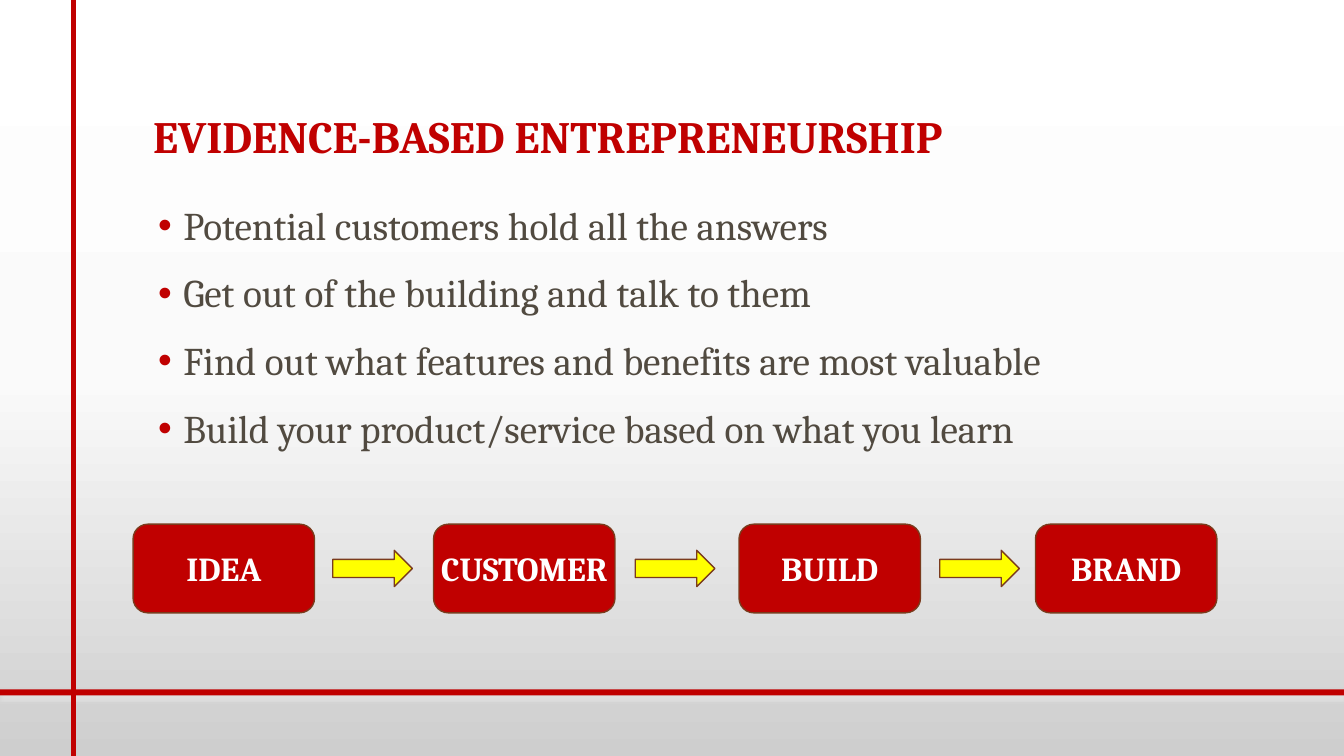
from copy import deepcopy

from lxml.etree import SubElement
from pptx import Presentation
from pptx.dml.color import RGBColor as RGB
from pptx.enum.shapes import MSO_CONNECTOR as LINE, MSO_SHAPE as SHAPE
from pptx.enum.text import MSO_ANCHOR as ANCHOR, PP_ALIGN as ALIGN
from pptx.oxml.ns import qn
from pptx.util import Inches, Pt

RED = RGB(0xC0, 0x00, 0x00)
BROWN = RGB(0x7A, 0x3B, 0x1D)
GREY = RGB(0x51, 0x4A, 0x40)
WHITE = RGB(0xFF, 0xFF, 0xFF)
YELLOW = RGB(0xFF, 0xFF, 0x00)
FADE = [(0, WHITE), (0.5, RGB(0xFA, 0xFA, 0xFA)), (1, RGB(0xCE, 0xCE, 0xCE))]

TITLE = "EVIDENCE-BASED ENTREPRENEURSHIP"
POINTS = [
    "Potential customers hold all the answers",
    "Get out of the building and talk to them",
    "Find out what features and benefits are most valuable",
    "Build your product/service based on what you learn",
]
STEPS = [("IDEA", 1.32), ("CUSTOMER", 4.3), ("BUILD", 7.33), ("BRAND", 10.27)]
ARROWS = [3.3, 6.3, 9.32]


def style(item, form):
    """Set each value of a format dict on an item."""
    for key, value in form.items():
        setattr(item, key, value)


def write(para, text, size, color, bold=False):
    """Add one run of text to a paragraph."""
    run = para.add_run()
    run.text = text
    style(run.font, {"name": "Cambria", "size": Pt(size), "bold": bold})
    run.font.color.rgb = color


def draw(slide, kind, box, fill, edge=None):
    """Draw a flat filled shape in a box given in inches."""
    shape = slide.shapes.add_shape(kind, *map(Inches, box))
    shape.shadow.inherit = False
    shape.fill.solid()
    shape.fill.fore_color.rgb = fill
    if edge is None:
        shape.line.fill.background()
    else:
        shape.line.color.rgb = edge
        shape.line.width = Pt(1)
    return shape


def frame(slide, box, anchor=ANCHOR.TOP):
    """Add a wrapping text box and return its text frame."""
    text = slide.shapes.add_textbox(*map(Inches, box)).text_frame
    style(text, {"word_wrap": True, "vertical_anchor": anchor})
    return text


def back(slide):
    """Fill the background with the grey fade."""
    fill = slide.background.fill
    fill.gradient()
    fill.gradient_angle = 270
    stops = fill._fill._gradFill.find(qn("a:gsLst"))
    stops.append(deepcopy(stops[0]))
    for stop, (place, color) in zip(fill.gradient_stops, FADE):
        stop.position = place
        stop.color.rgb = color


def rules(slide, wide, high):
    """Draw the red cross rules over the whole slide."""
    bar = draw(slide, SHAPE.RECTANGLE, (0, 6.84, wide, 0.06), RED)
    effects = bar._element.spPr.find(qn("a:effectLst"))
    glow = SubElement(effects, qn("a:outerShdw"), blurRad=str(Pt(2)),
                      dist=str(Pt(2)), dir="5400000", rotWithShape="0")
    tint = SubElement(glow, qn("a:srgbClr"), val=str(WHITE))
    SubElement(tint, qn("a:alpha"), val="40000")
    ends = map(Inches, (0.73, 0, 0.73, high))
    line = slide.shapes.add_connector(LINE.STRAIGHT, *ends)
    line.line.color.rgb = RED
    line.line.width = Pt(4)
    SubElement(line._element.spPr, qn("a:effectLst"))


def head(slide, box):
    """Write the title at the foot of its box."""
    para = frame(slide, box, ANCHOR.BOTTOM).paragraphs[0]
    para.line_spacing = 0.9
    write(para, TITLE, 32, RED, True)


def points(slide, box):
    """Write the bulleted points."""
    text = frame(slide, box)
    for i, point in enumerate(POINTS):
        para = text.add_paragraph() if i else text.paragraphs[0]
        style(para, {"line_spacing": 0.9, "space_before": Pt(18 if i else 0)})
        props = para._p.get_or_add_pPr()
        props.set("marL", str(Inches(0.3)))
        props.set("indent", str(Inches(-0.25)))
        tint = SubElement(props, qn("a:buClr"))
        SubElement(tint, qn("a:srgbClr"), val=str(RED))
        SubElement(props, qn("a:buFont"), typeface="Arial")
        SubElement(props, qn("a:buChar"), char="•")
        write(para, point, 28, GREY)


def flow(slide, top, high):
    """Draw the steps in a row with arrows centred between them."""
    for name, left in STEPS:
        step = draw(slide, SHAPE.ROUNDED_RECTANGLE, (left, top, 1.8, high), RED, BROWN)
        step.adjustments[0] = 0.167
        text = step.text_frame
        style(text, {"word_wrap": False, "vertical_anchor": ANCHOR.MIDDLE,
                     "margin_left": 0, "margin_right": 0})
        para = text.paragraphs[0]
        para.alignment = ALIGN.CENTER
        write(para, name, 24, WHITE, True)
    tall = 0.36
    for left in ARROWS:
        box = (left, top + (high - tall) / 2, 0.79, tall)
        draw(slide, SHAPE.RIGHT_ARROW, box, YELLOW, BROWN)


def main():
    """Build and save the slide."""
    deck = Presentation()
    wide, high = 13.33, 7.5
    style(deck, {"slide_width": Inches(wide), "slide_height": Inches(high)})
    slide = deck.slides.add_slide(deck.slide_layouts[6])
    back(slide)
    rules(slide, wide, high)
    head(slide, (1.42, 0.42, 10.5, 1.25))
    points(slide, (1.42, 2, 10.5, 4.5))
    flow(slide, 5.2, 0.88)
    deck.save("out.pptx")


if __name__ == "__main__":
    main()
